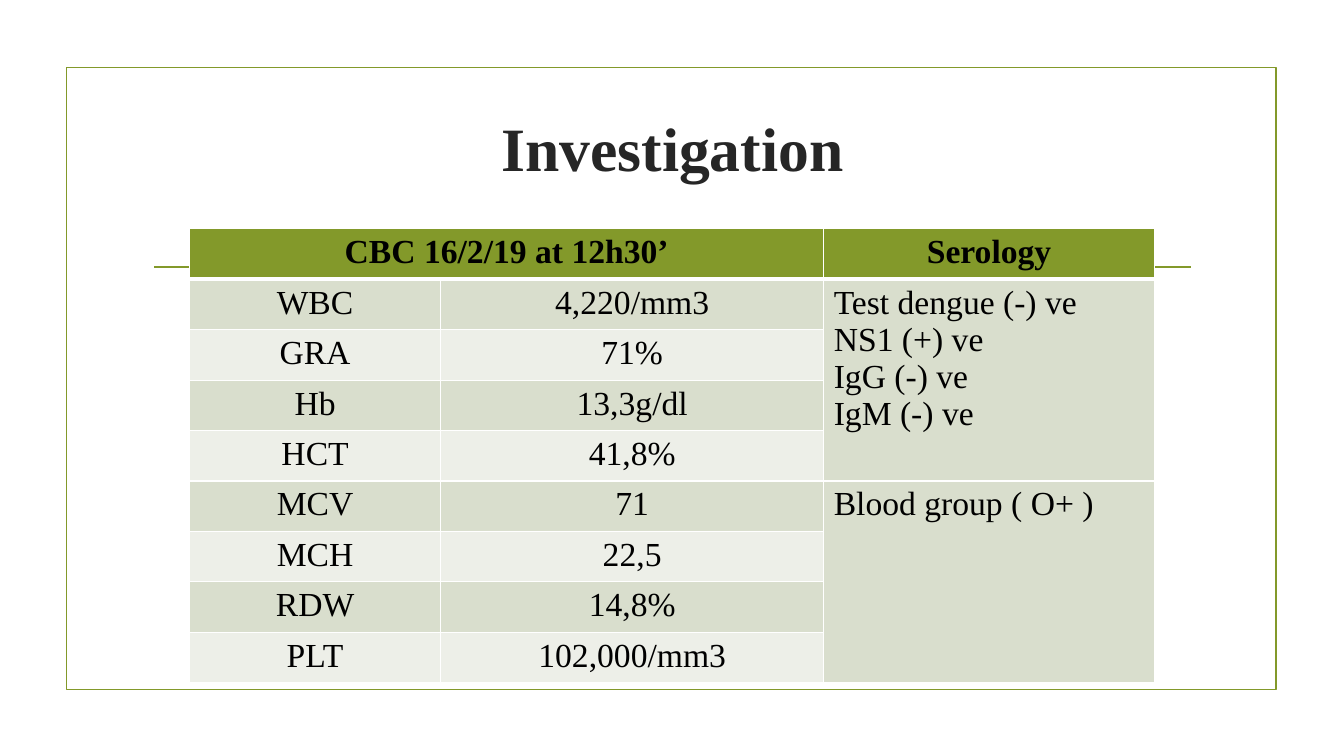
from lxml import etree
from pptx import Presentation
from pptx.dml.color import RGBColor
from pptx.enum.shapes import MSO_CONNECTOR, MSO_SHAPE
from pptx.enum.text import MSO_ANCHOR, PP_ALIGN
from pptx.oxml.ns import qn
from pptx.util import Inches, Pt

RECT = MSO_SHAPE.RECTANGLE
LINE = MSO_CONNECTOR.STRAIGHT
MIDDLE = MSO_ANCHOR.MIDDLE
LEFT, CENTER = PP_ALIGN.LEFT, PP_ALIGN.CENTER

GREEN = RGBColor(0x83, 0x99, 0x2A)
BANDS = [RGBColor(0xED, 0xEF, 0xE8), RGBColor(0xD9, 0xDE, 0xCD)]
DARK = RGBColor(0x26, 0x26, 0x26)
BLACK = RGBColor(0, 0, 0)
WHITE = RGBColor(0xFF, 0xFF, 0xFF)
FONT = "Times New Roman"


def write(frame, text, size=24, color=BLACK, bold=False, align=CENTER):
    frame.word_wrap = True
    for i, line in enumerate(text.split("\n")):
        para = frame.paragraphs[0] if i == 0 else frame.add_paragraph()
        para.alignment = align
        run = para.add_run()
        run.text = line
        run.font.name = FONT
        run.font.size = Pt(size)
        run.font.bold = bold
        run.font.color.rgb = color


def edge(cell, sides):
    props = cell._tc.get_or_add_tcPr()
    for i, (side, width) in enumerate(sides.items()):
        line = etree.Element(qn("a:ln" + side), w=str(Pt(width)))
        fill = etree.SubElement(line, qn("a:solidFill"))
        etree.SubElement(fill, qn("a:srgbClr"), val=str(WHITE))
        props.insert(i, line)


deck = Presentation()
deck.slide_width, deck.slide_height = Inches(13.33), Inches(7.5)
slide = deck.slides.add_slide(deck.slide_layouts[6])
shapes = slide.shapes

frame = shapes.add_shape(RECT, Inches(0.66), Inches(0.67), Inches(12), Inches(6.17))
frame.shadow.inherit = False
frame.fill.background()

rule = shapes.add_connector(LINE, Inches(1.53), Inches(2.65), Inches(11.81), Inches(2.65))
etree.SubElement(rule._element.spPr, qn("a:effectLst"))
for item in (frame, rule):
    item.line.color.rgb = GREEN
    item.line.width = Pt(1.25)

title = shapes.add_textbox(Inches(1.42), Inches(0.74), Inches(10.5), Inches(1.43))
title.text_frame.vertical_anchor = MIDDLE
write(title.text_frame, "Investigation", size=44, color=DARK, bold=True)

SEROLOGY = "Test dengue (-) ve\nNS1 (+) ve\nIgG (-) ve\nIgM (-) ve"
ROWS = [
    ("CBC 16/2/19 at 12h30’", "", "Serology"),
    ("WBC", "4,220/mm3", SEROLOGY),
    ("GRA", "71%", ""),
    ("Hb", "13,3g/dl", ""),
    ("HCT", "41,8%", ""),
    ("MCV", "71", "Blood group ( O+ )"),
    ("MCH", "22,5", ""),
    ("RDW", "14,8%", ""),
    ("PLT", "102,000/mm3", ""),
]
COLS = [2.49, 3.8, 3.28]
HIGH = 0.47

table = shapes.add_table(
    len(ROWS), len(COLS), Inches(1.88), Inches(2.27),
    Inches(sum(COLS)), Inches(HIGH * len(ROWS))).table
for col, width in zip(table.columns, COLS):
    col.width = Inches(width)
for row in table.rows:
    row.height = Inches(HIGH)
for first, last in (((0, 0), (0, 1)), ((1, 2), (4, 2)), ((5, 2), (8, 2))):
    table.cell(*first).merge(table.cell(*last))

for r, texts in enumerate(ROWS):
    head = r == 0
    for c, text in enumerate(texts):
        cell = table.cell(r, c)
        side = c == 2 and not head
        cell.fill.solid()
        cell.fill.fore_color.rgb = GREEN if head else BANDS[1 if side else r % 2]
        edge(cell, {"L": 1, "R": 1, "T": 3 if r == 1 else 1, "B": 3 if head else 1})
        if text:
            write(cell.text_frame, text, bold=head, align=LEFT if side else CENTER)
        else:
            cell.text_frame.paragraphs[0].font.size = Pt(24)

deck.save("out.pptx")
